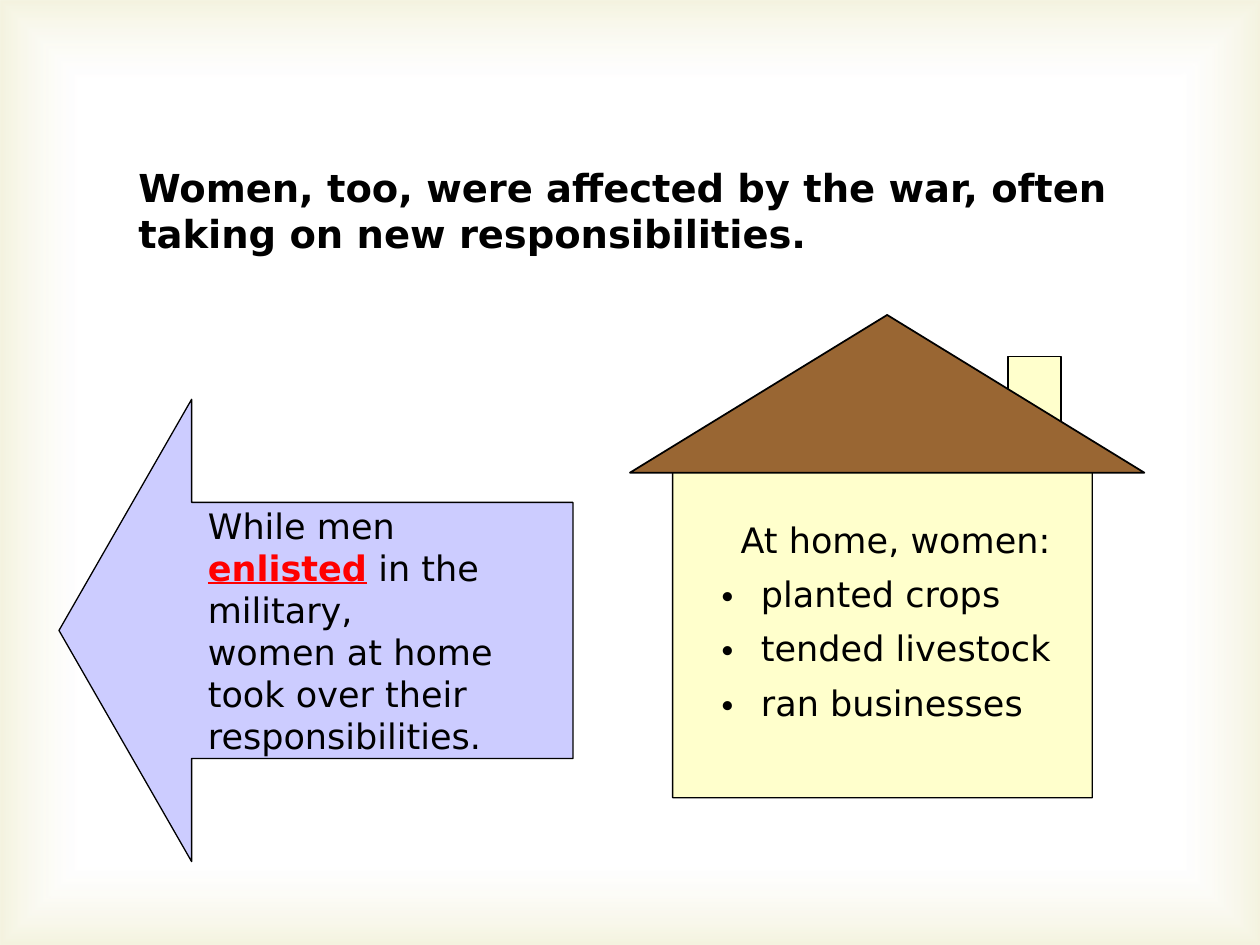
import pptx
import pptx.util
import pptx.dml.color
import pptx.enum.shapes
import pptx.enum.text
import pptx.oxml
import pptx.oxml.ns

Cm = pptx.util.Cm
Pt = pptx.util.Pt
SHAPE = pptx.enum.shapes.MSO_SHAPE
TEXT = pptx.enum.text
qn = pptx.oxml.ns.qn

COLORS = {
    "black": "000000",
    "red": "FF0000",
    "white": "FFFFFF",
    "edge": "D1CA75",
    "arrow": "CCCCFF",
    "wall": "FFFFCC",
    "roof": "996633",
}
BODY = {"name": "DejaVu Sans", "size": Pt(20), "color": "black"}
TITLE = {**BODY, "size": Pt(22), "bold": True}
KEY_TERM = {**BODY, "color": "red", "bold": True, "underline": True}


def rgb(name):
    """Return the palette colour as an RGBColor."""
    return pptx.dml.color.RGBColor.from_string(COLORS[name])


def add_run(p, text, style):
    """Add a run formatted by a dict of font values."""
    r = p.add_run()
    r.text = text
    for key, value in style.items():
        if key == "color":
            r.font.color.rgb = rgb(value)
        else:
            setattr(r.font, key, value)


def add_lines(p, lines, style):
    """Add runs separated by line breaks."""
    for i, line in enumerate(lines):
        if i:
            p.add_line_break()
        add_run(p, line, style)


def add_shape(shapes, kind, box, fill, line=0.75, adj=()):
    """Add a filled and outlined shape without shadow."""
    sp = shapes.add_shape(kind, *(Cm(v) for v in box))
    sp.shadow.inherit = False
    sp.fill.solid()
    sp.fill.fore_color.rgb = rgb(fill)
    sp.line.color.rgb = rgb("black")
    sp.line.width = Pt(line)
    for i, value in enumerate(adj):
        sp.adjustments[i] = value
    return sp


def format_frame(tf, insets):
    """Centre an unwrapped text frame vertically within its insets."""
    sides = ("margin_left", "margin_top", "margin_right", "margin_bottom")
    values = dict(zip(sides, (Cm(v) for v in insets)))
    values.update(word_wrap=False, vertical_anchor=TEXT.MSO_ANCHOR.MIDDLE)
    for key, value in values.items():
        setattr(tf, key, value)


def add_glow(s, prs):
    """Cover the slide with a pale gradient that deepens at the edges."""
    sp = s.shapes.add_shape(SHAPE.RECTANGLE, 0, 0, prs.slide_width, prs.slide_height)
    sp.shadow.inherit = False
    sp.line.fill.background()
    stops = "".join(
        f'<a:gs pos="{pos}000"><a:srgbClr val="{COLORS[name]}">'
        f'<a:alpha val="{alpha}000"/></a:srgbClr></a:gs>'
        for pos, name, alpha in ((83, "white", 11), (100, "edge", 23))
    )
    grad = pptx.oxml.parse_xml(
        f'<a:gradFill {pptx.oxml.ns.nsdecls("a")} rotWithShape="1">'
        f'<a:gsLst>{stops}</a:gsLst><a:path path="rect">'
        '<a:fillToRect l="50000" t="50000" r="50000" b="50000"/></a:path></a:gradFill>'
    )
    sp.element.spPr.find(qn("a:prstGeom")).addnext(grad)


def add_title(s, text):
    """Add the slide's heading."""
    tf = s.shapes.add_textbox(Cm(2.54), Cm(3.18), Cm(20.32), Cm(2.54)).text_frame
    tf.word_wrap = True
    tf.auto_size = TEXT.MSO_AUTO_SIZE.SHAPE_TO_FIT_TEXT
    add_run(tf.paragraphs[0], text, TITLE)


def add_arrow(s):
    """Add the arrow about men leaving for the military."""
    box = (1.19, 8.05, 10.36, 9.32)
    sp = add_shape(s.shapes, SHAPE.LEFT_ARROW, box, "arrow", adj=(0.554, 0.287))
    tf = sp.text_frame
    format_frame(tf, (1.52, 0.13, 0.25, 0.13))
    first, second = tf.paragraphs[0], tf.add_paragraph()
    first.alignment = second.alignment = TEXT.PP_ALIGN.LEFT
    add_run(first, "While men", BODY)
    add_run(second, "enlisted", KEY_TERM)
    lines = (" in the", "military,", "women at home", "took over their", "responsibilities.")
    add_lines(second, lines, BODY)


def add_item(p, text, indent, bullet=False):
    """Fill a left-aligned paragraph, with a hanging bullet if asked."""
    pPr = p._p.get_or_add_pPr()
    pPr.set("marL", str(Cm(indent)))
    if bullet:
        pPr.set("indent", str(-Cm(indent)))
        pPr.append(pptx.oxml.parse_xml(
            f'<a:buChar {pptx.oxml.ns.nsdecls("a")} char="•"/>'))
    p.alignment = TEXT.PP_ALIGN.LEFT
    p.space_after = Pt(7)
    add_run(p, text, BODY)


def add_house(s):
    """Add the house listing what women did at home."""
    shapes = s.shapes.add_group_shape().shapes
    add_shape(shapes, SHAPE.RECTANGLE, (20.32, 7.19, 1.07, 1.9), "wall")
    wall = add_shape(shapes, SHAPE.PENTAGON, (13.13, 7.19, 9.32, 8.46), "wall", adj=(0.275,))
    wall.rotation = 270
    tf = wall.text_frame
    format_frame(tf, (0.25, 1.14, 1.27, 0.13))
    wall.element.txBody.find(qn("a:bodyPr")).set("vert", "eaVert")
    add_item(tf.paragraphs[0], "At home, women:", 0.23)
    for text in ("planted crops", "tended livestock", "ran businesses"):
        add_item(tf.add_paragraph(), text, 0.64, bullet=True)
    add_shape(shapes, SHAPE.ISOSCELES_TRIANGLE, (12.7, 6.35, 10.37, 3.18), "roof", line=1)


def main():
    """Build and save the slide."""
    prs = pptx.Presentation()
    prs.slide_width, prs.slide_height = Cm(25.4), Cm(19.05)
    s = prs.slides.add_slide(prs.slide_layouts[6])
    add_glow(s, prs)
    add_title(s, "Women, too, were affected by the war, often taking on new responsibilities.")
    add_arrow(s)
    add_house(s)
    prs.save("out.pptx")


if __name__ == "__main__":
    main()
